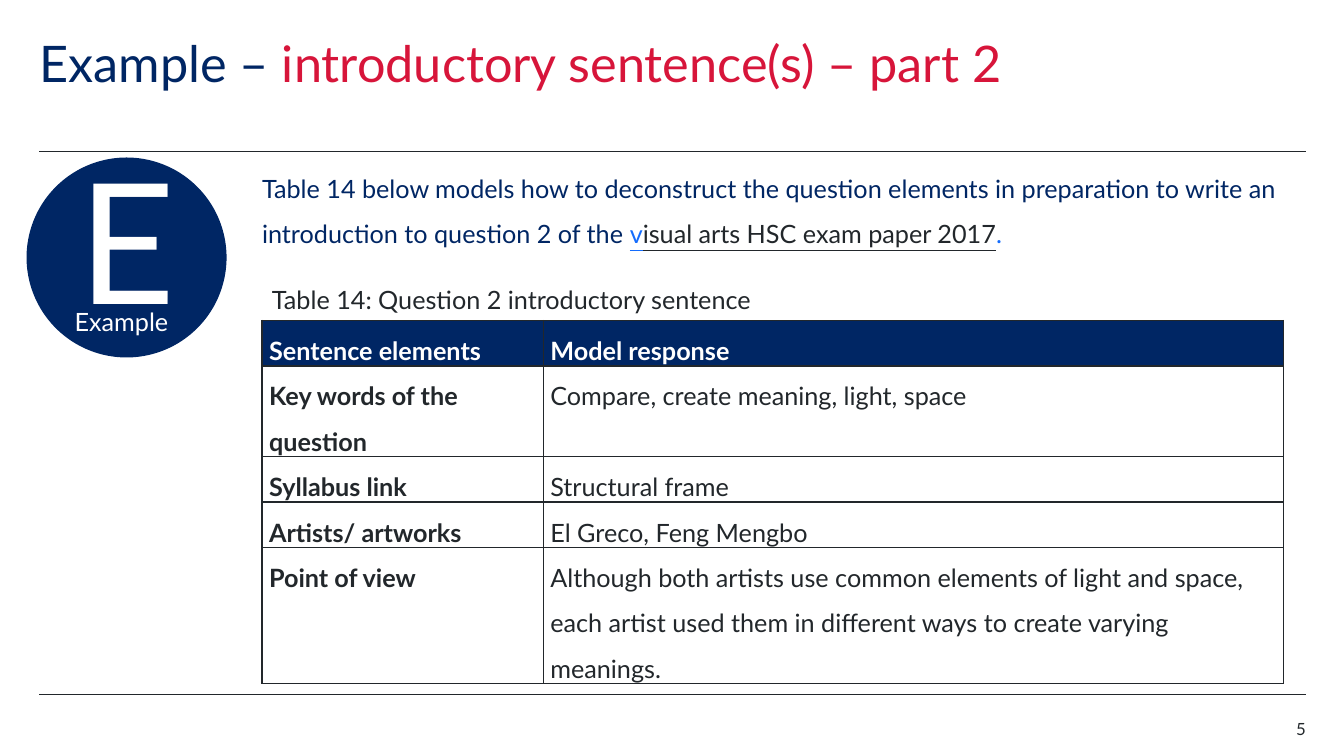
from lxml.etree import SubElement
from pptx import Presentation
from pptx.dml.color import RGBColor
from pptx.enum.shapes import MSO_CONNECTOR, MSO_SHAPE
from pptx.enum.text import MSO_ANCHOR, PP_ALIGN
from pptx.oxml.ns import qn
from pptx.util import Inches, Pt

WIDTH, HEIGHT = Inches(13.33), Inches(7.5)
NAVY, RED, BLUE, INK, WHITE = "002664", "D7153A", "146CFD", "22272B", "FFFFFF"
LEFT, RIGHT, CONTENT_LEFT, CONTENT_TOP = 2.93, 97.15, 19.5, 20.93
COLUMNS, LINE_HEIGHT = (20.93, 55.06), 6
ROWS = [
    (1, "Sentence elements", "Model response"),
    (2, "Key words of the question", "Compare, create meaning, light, space"),
    (1, "Syllabus link", "Structural frame"),
    (1, "Artists/ artworks", "El Greco, Feng Mengbo"),
    (3, "Point of view", "Although both artists use common elements of light and space, "
        "each artist used them in different ways to create varying meanings."),
]


def rgb(value):
    """Turn a hex string into a colour."""
    return RGBColor.from_string(value)


def across(share):
    """Turn a percentage of the slide width into a length."""
    return int(WIDTH * share / 100)


def down(share):
    """Turn a percentage of the slide height into a length."""
    return int(HEIGHT * share / 100)


def box(x, y, w, h):
    """Turn percentages of the slide into a position and size."""
    return across(x), down(y), across(w), down(h)


def assign(target, values):
    """Set each attribute named in a dict."""
    for name, value in values.items():
        setattr(target, name, value)


def write(tf, runs, size=18, **paragraph):
    """Fill the first paragraph with (text, colour, font values) runs."""
    p = tf.paragraphs[0]
    assign(p, paragraph)
    for text, color, *extra in runs:
        r = p.add_run()
        r.text = text
        assign(r.font, {"name": "Lato", "size": Pt(size), **(extra[0] if extra else {})})
        r.font.color.rgb = rgb(color)


def add_text(s, place, runs, size=18, inset=0, anchor=MSO_ANCHOR.TOP, **paragraph):
    """Add a wrapping text box with equal insets."""
    tf = s.shapes.add_textbox(*box(*place)).text_frame
    margins = dict.fromkeys(("margin_left", "margin_top", "margin_right", "margin_bottom"), Inches(inset))
    assign(tf, {"word_wrap": True, "vertical_anchor": anchor, **margins})
    write(tf, runs, size, **paragraph)


def add_rule(s, y):
    """Draw a thin horizontal rule between the slide margins."""
    sp = s.shapes.add_connector(MSO_CONNECTOR.STRAIGHT, across(LEFT), down(y), across(RIGHT), down(y))
    sp.line.color.rgb = rgb(INK)
    sp.line.width = Pt(0.5)
    SubElement(sp._element.spPr, qn("a:effectLst"))


def add_badge(s, place, letter):
    """Draw a filled circle holding a large letter."""
    sp = s.shapes.add_shape(MSO_SHAPE.OVAL, *box(*place))
    sp.shadow.inherit = False
    sp.fill.solid()
    sp.fill.fore_color.rgb = sp.line.color.rgb = rgb(NAVY)
    sp.line.width = Pt(1)
    assign(sp.text_frame, {"vertical_anchor": MSO_ANCHOR.MIDDLE, "margin_bottom": Inches(0.45)})
    write(sp.text_frame, [(letter, WHITE)], 120, alignment=PP_ALIGN.CENTER)


def add_borders(cell):
    """Give a table cell a thin line on every side."""
    for side in ("lnL", "lnR", "lnT", "lnB"):
        ln = SubElement(cell._tc.get_or_add_tcPr(), qn(f"a:{side}"), w=str(Pt(1)))
        SubElement(SubElement(ln, qn("a:solidFill")), qn("a:srgbClr"), val=INK)


def add_response_table(s, x, y):
    """Add the table of sentence elements and model responses."""
    lines = [row[0] for row in ROWS]
    place = box(x, y, sum(COLUMNS), sum(lines) * LINE_HEIGHT)
    table = s.shapes.add_table(len(ROWS), len(COLUMNS), *place).table
    for column, width in zip(table.columns, COLUMNS):
        column.width = across(width)
    for i, (count, *texts) in enumerate(ROWS):
        table.rows[i].height = down(count * LINE_HEIGHT)
        for j, text in enumerate(texts):
            cell, header = table.cell(i, j), i == 0
            assign(cell, {"margin_left": Inches(0.07), "margin_right": Inches(0.07),
                          "margin_top": 0, "margin_bottom": 0})
            add_borders(cell)
            cell.fill.solid()
            cell.fill.fore_color.rgb = rgb(NAVY if header else WHITE)
            font = {"bold": header or j == 0}
            write(cell.text_frame, [(text, WHITE if header else INK, font)], line_spacing=1.5)


def main():
    """Build the slide and save it."""
    prs = Presentation()
    assign(prs, {"slide_width": WIDTH, "slide_height": HEIGHT})
    s = prs.slides.add_slide(prs.slide_layouts[6])
    for y in (20, 91.87):
        add_rule(s, y)
    add_text(s, (LEFT, 5.2, 82.67, 14.67),
             [("Example – ", NAVY), ("introductory sentence(s) – part 2", RED)], 36, line_spacing=0.9)
    add_badge(s, (2.03, CONTENT_TOP, 14.78, 26.27), "E")
    add_text(s, (5.55, 40.53, 7.73, 6.4), [("Example", WHITE)])
    add_text(s, (CONTENT_LEFT, CONTENT_TOP, 77.65, 10.27), [
        ("Table 14 below models how to deconstruct the question elements in preparation "
         "to write an introduction to question 2 of the ", NAVY),
        ("v", BLUE, {"underline": True}),
        ("isual arts HSC exam paper 2017", INK, {"underline": True}),
        (".", BLUE),
    ], line_spacing=1.5)
    add_text(s, (CONTENT_LEFT, 36.93, 40.74, 5.33),
             [("Table 14: Question 2 introductory sentence", INK)], inset=0.1, anchor=MSO_ANCHOR.MIDDLE)
    add_response_table(s, CONTENT_LEFT, 42.4)
    add_text(s, (91.3, 95.07, 5.85, 2.67), [("5", INK)], 12, alignment=PP_ALIGN.RIGHT)
    prs.save("out.pptx")


if __name__ == "__main__":
    main()
